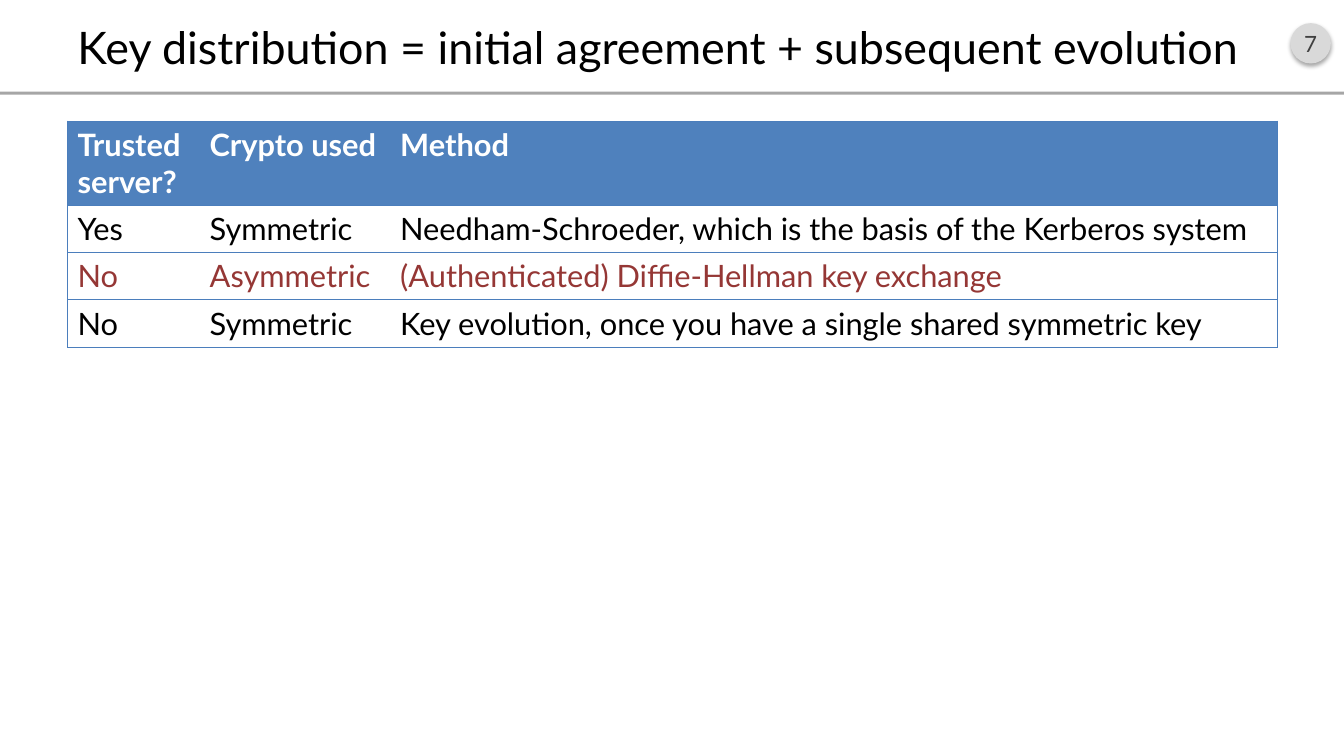
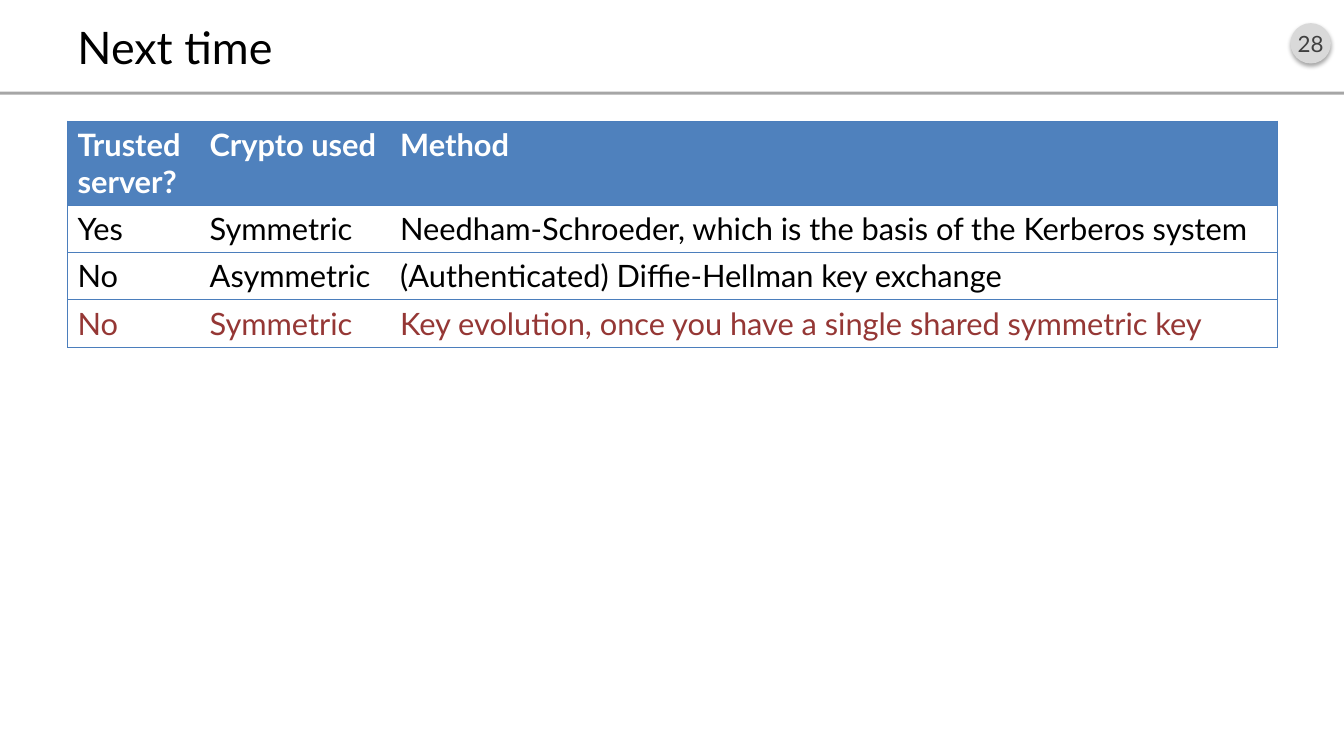
"""Builds two slides on key distribution, each with the same table and one marked row."""
from lxml import etree
from pptx import Presentation
from pptx.dml.color import RGBColor
from pptx.enum.shapes import MSO_SHAPE
from pptx.enum.text import MSO_ANCHOR, PP_ALIGN
from pptx.oxml import parse_xml
from pptx.oxml.ns import qn
from pptx.util import Inches, Pt

OVAL, RECT = MSO_SHAPE.OVAL, MSO_SHAPE.RECTANGLE
LEFT, CENTER = PP_ALIGN.LEFT, PP_ALIGN.CENTER
TOP, MIDDLE = MSO_ANCHOR.TOP, MSO_ANCHOR.MIDDLE

SLIDES = [
    {"title": "Key distribution = initial agreement + subsequent evolution",
     "number": "7", "marked": 2},
    {"title": "Next time", "number": "28", "marked": 3},
]
ROWS = [
    ("Trusted server?", "Crypto used", "Method"),
    ("Yes", "Symmetric",
     "Needham-Schroeder, which is the basis of the Kerberos system"),
    ("No", "Asymmetric", "(Authenticated) Diffie-Hellman key exchange"),
    ("No", "Symmetric",
     "Key evolution, once you have a single shared symmetric key"),
]
WIDTHS = (1.31, 1.89, 8.8)
HEIGHTS = (0.83,) + (0.47,) * 3
WIDE, HIGH, EDGE = 13.33, 7.5, 0.67

FONT = "Lato"
BLACK, WHITE, RED = "000000", "FFFFFF", "953735"
BLUE, BORDER = "4F81BD", "4B7EBC"
BAND, BADGE, DARK = "A6A6A6", "D9D9D9", "404040"
SHADOW = (
    '<a:outerShdw xmlns:a="http://schemas.openxmlformats.org/drawingml/2006/main"'
    ' blurRad="40000" dist="23000" dir="5400000" rotWithShape="0">'
    '<a:srgbClr val="000000"><a:alpha val="35000"/></a:srgbClr></a:outerShdw>')


def color(code):
    return RGBColor.from_string(code)


def box(*sizes):
    return [Inches(size) for size in sizes]


def write(frame, text, size=22, ink=BLACK, bold=False, align=LEFT, anchor=MIDDLE):
    frame.word_wrap = True
    frame.vertical_anchor = anchor
    line = frame.paragraphs[0]
    line.alignment = align
    run = line.add_run()
    run.text = text
    font = run.font
    font.name, font.size, font.bold = FONT, Pt(size), bold
    font.color.rgb = color(ink)


def add_solid(slide, kind, place, fill):
    shape = slide.shapes.add_shape(kind, *box(*place))
    shape.shadow.inherit = False
    shape.fill.solid()
    shape.fill.fore_color.rgb = color(fill)
    shape.line.fill.background()
    return shape


def add_frame(slide, title, number):
    badge = add_solid(slide, OVAL, (12.8, 0.23, 0.4, 0.4), BADGE)
    badge.element.spPr.find(qn("a:effectLst")).append(parse_xml(SHADOW))
    badge.text_frame.margin_left = badge.text_frame.margin_right = 0
    write(badge.text_frame, number, size=16, ink=DARK, align=CENTER)
    add_solid(slide, RECT, (0, 0.91, WIDE, 0.03), BAND)
    head = slide.shapes.add_textbox(*box(EDGE, 0.16, 12, 0.6))
    write(head.text_frame, title, size=32)


def set_borders(cell, sides):
    props = cell._tc.get_or_add_tcPr()
    for side in "LRTB":
        line = etree.SubElement(props, qn("a:ln" + side), w=str(Pt(0.75)))
        if side in sides:
            fill = etree.SubElement(line, qn("a:solidFill"))
            etree.SubElement(fill, qn("a:srgbClr"), val=BORDER)
        else:
            etree.SubElement(line, qn("a:noFill"))


def add_grid(slide, marked):
    place = box(EDGE, 1.2, sum(WIDTHS), sum(HEIGHTS))
    table = slide.shapes.add_table(len(ROWS), len(WIDTHS), *place).table
    table.horz_banding = False
    for column, width in zip(table.columns, WIDTHS):
        column.width = Inches(width)
    for row, height in zip(table.rows, HEIGHTS):
        row.height = Inches(height)
    ends = {0: "LTB", len(WIDTHS) - 1: "RTB"}
    for r, texts in enumerate(ROWS):
        header = r == 0
        ink = WHITE if header else RED if r == marked else BLACK
        for c, text in enumerate(texts):
            cell = table.cell(r, c)
            set_borders(cell, ends.get(c, "TB"))
            if header:
                cell.fill.solid()
                cell.fill.fore_color.rgb = color(BLUE)
            else:
                cell.fill.background()
            write(cell.text_frame, text, ink=ink, bold=header, anchor=TOP)


def main():
    deck = Presentation()
    deck.slide_width, deck.slide_height = box(WIDE, HIGH)
    for item in SLIDES:
        slide = deck.slides.add_slide(deck.slide_layouts[6])
        add_frame(slide, item["title"], item["number"])
        add_grid(slide, item["marked"])
    deck.save("out.pptx")


if __name__ == "__main__":
    main()
